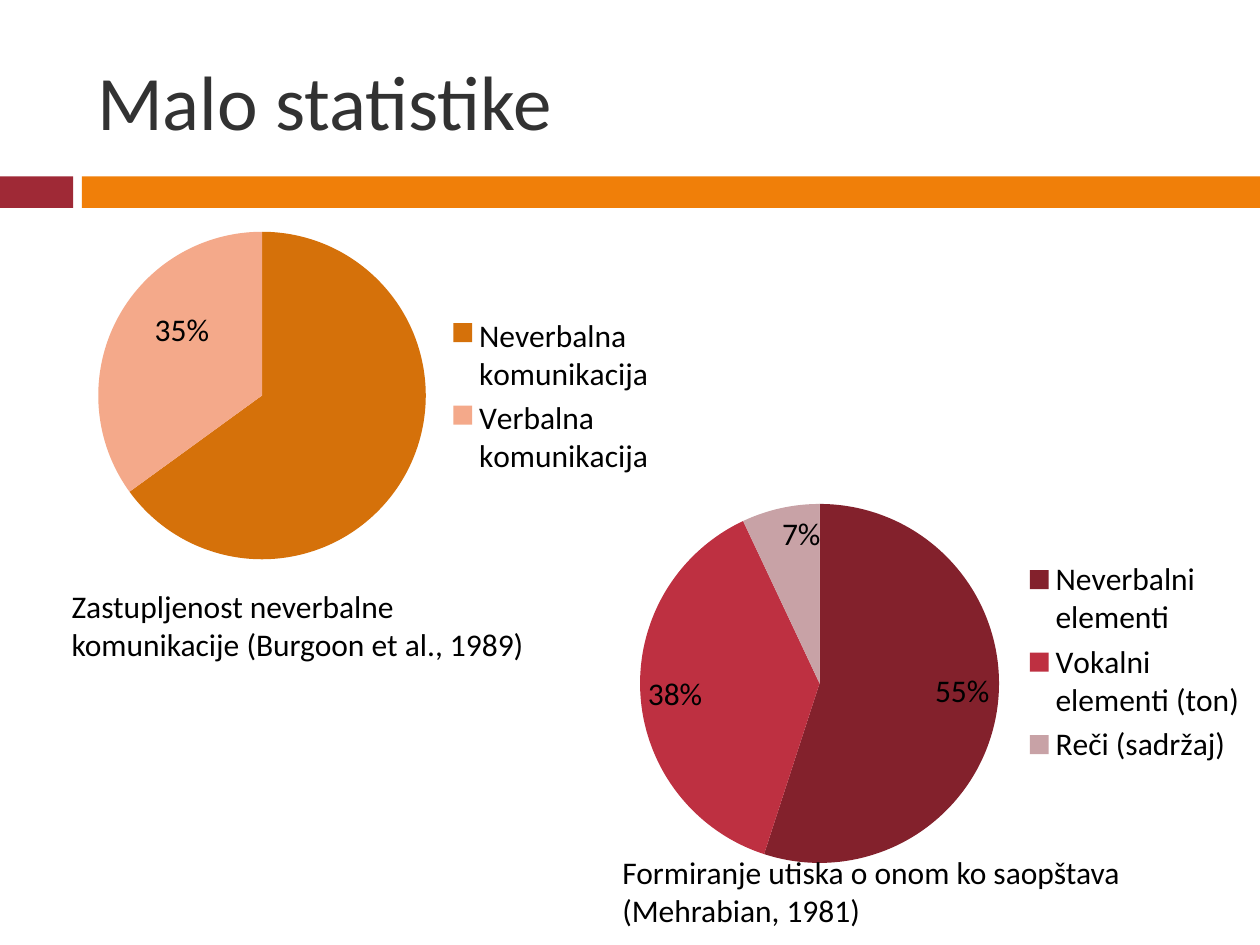
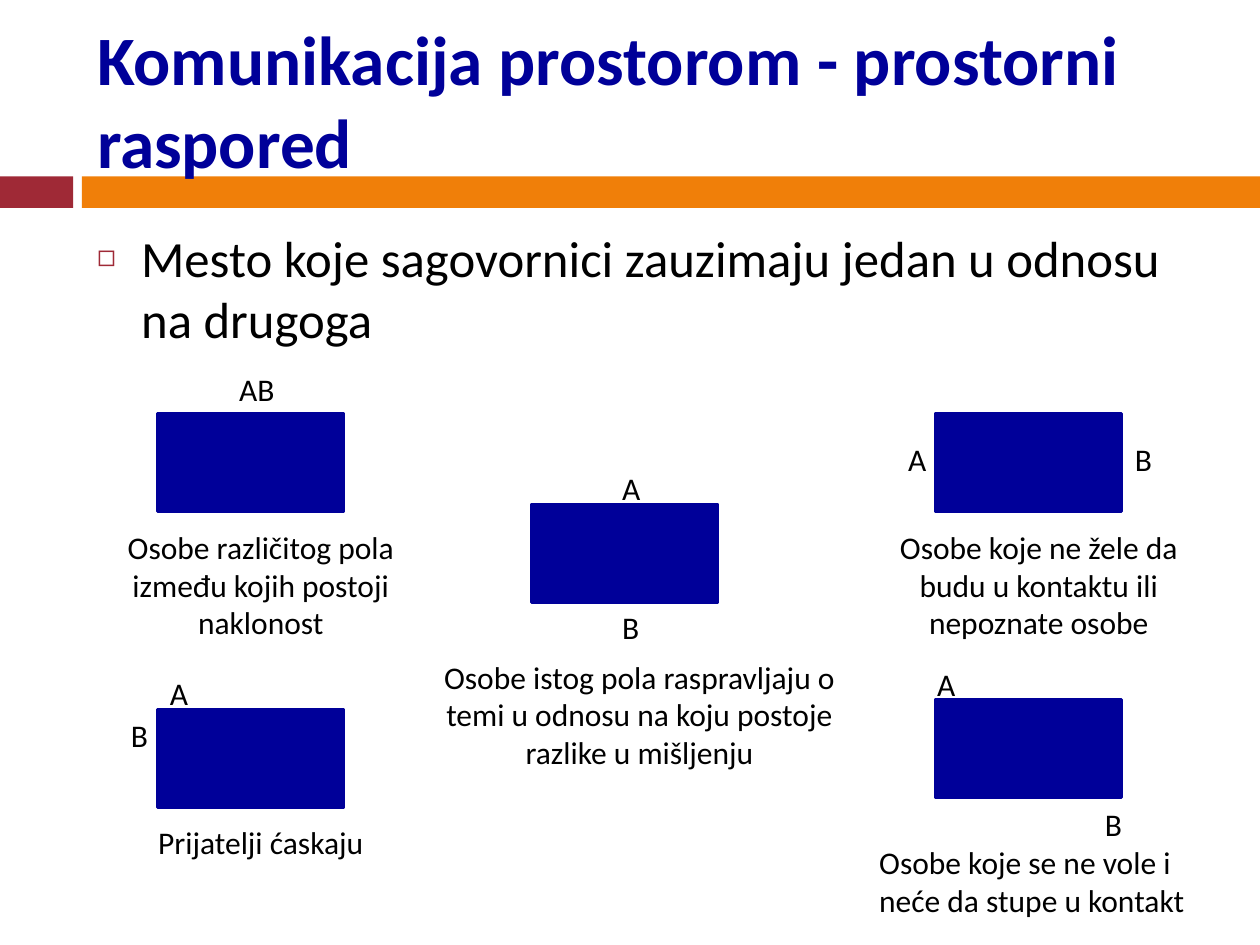
"""Build two slides on nonverbal communication: pie charts and seating plans."""
from lxml import etree
from pptx import Presentation
from pptx.chart.data import CategoryChartData
from pptx.dml.color import RGBColor
from pptx.enum.chart import XL_CHART_TYPE, XL_LABEL_POSITION, XL_LEGEND_POSITION
from pptx.enum.shapes import MSO_SHAPE
from pptx.enum.text import MSO_ANCHOR, MSO_AUTO_SIZE, PP_ALIGN
from pptx.oxml import parse_xml
from pptx.oxml.ns import nsdecls, qn
from pptx.util import Inches, Pt

PIE = XL_CHART_TYPE.PIE
INSIDE = XL_LABEL_POSITION.INSIDE_END
RIGHT = XL_LEGEND_POSITION.RIGHT
RECT = MSO_SHAPE.RECTANGLE
MIDDLE, TOP = MSO_ANCHOR.MIDDLE, MSO_ANCHOR.TOP
FIXED = MSO_AUTO_SIZE.NONE
LEFT, CENTER = PP_ALIGN.LEFT, PP_ALIGN.CENTER

FONT = "Calibri"
HUES = {
    "red": "9F2936", "orange": "F07F09", "title": "323232", "text": "000000",
    "navy": "000099", "amber": "D5710A", "peach": "F4A98A",
    "wine": "83212C", "rose": "BE3041", "mauve": "C8A2A6",
}
HUE = {name: RGBColor.from_string(code) for name, code in HUES.items()}


def write(shape, text, size=18, hue="text", align=LEFT, anchor=TOP, bold=False):
    frame = shape.text_frame
    frame.text = text
    frame.word_wrap = True
    frame.auto_size = FIXED
    frame.vertical_anchor = anchor
    para = frame.paragraphs[0]
    para.alignment = align
    font = para.runs[0].font
    font.name, font.size, font.bold = FONT, Pt(size), bold
    font.color.rgb = HUE[hue]
    return para


def block(slide, box, hue):
    shape = slide.shapes.add_shape(RECT, *map(Inches, box))
    shape.shadow.inherit = False
    shape.fill.solid()
    shape.fill.fore_color.rgb = HUE[hue]
    shape.line.fill.background()
    return shape


deck = Presentation()
deck.slide_width, deck.slide_height = Inches(10), Inches(7.5)

TITLES = [
    (5, "Malo statistike", 44, "title", False),
    (1, "Komunikacija prostorom - prostorni raspored", 39.6, "navy", True),
]
BANDS = [((0, 1.4, 0.58, 0.25), "red"), ((0.65, 1.4, 9.35, 0.25), "orange")]
for layout, text, size, hue, bold in TITLES:
    slide = deck.slides.add_slide(deck.slide_layouts[layout])
    for box, tint in BANDS:
        band = block(slide, box, tint)
        slide.shapes._spTree.insert(2, band._element)
    title = slide.shapes.title
    title.left, title.top, title.width, title.height = map(
        Inches, (0.67, 0.25, 8.92, 1.08))
    write(title, text, size, hue, LEFT, MIDDLE, bold)
stats, seats = deck.slides

WIDE, HIGH = 5.08, 3.47
PIES = [
    (0.23, 1.41, (0.78, 1.84, 2.6),
     [("Neverbalna komunikacija", 65, "amber"), ("Verbalna komunikacija", 35, "peach")]),
    (4.92, 3.52, (5.08, 4, 2.85),
     [("Neverbalni elementi", 55, "wine"), ("Vokalni elementi (ton)", 38, "rose"),
      ("Reči (sadržaj)", 7, "mauve")]),
]
charts = []
for left, top, (x, y, size), parts in PIES:
    data = CategoryChartData()
    data.categories = [name for name, value, hue in parts]
    data.add_series("Series 1", [value for name, value, hue in parts])
    chart = stats.shapes.add_chart(
        PIE, *map(Inches, (left, top, WIDE, HIGH)), data).chart
    charts.append(chart)
    chart.has_title = False
    chart.font.name, chart.font.size = FONT, Pt(18)
    chart.font.color.rgb = HUE["text"]
    chart.has_legend = True
    chart.legend.position = RIGHT
    chart.legend.include_in_layout = False
    plot = chart.plots[0]
    plot.vary_by_categories = True
    plot.has_data_labels = True
    labels = plot.data_labels
    labels.show_value = True
    labels.show_percentage = False
    labels.number_format = '0"%"'
    labels.number_format_is_linked = False
    labels.position = INSIDE
    for i, (name, value, hue) in enumerate(parts):
        fill = plot.series[0].points[i].format.fill
        fill.solid()
        fill.fore_color.rgb = HUE[hue]

    area = plot._element.getparent()
    for old in area.findall(qn("c:layout")):
        area.remove(old)
    frame = parse_xml(f"<c:layout {nsdecls('c')}><c:manualLayout/></c:layout>")
    area.insert(0, frame)
    rule = {"layoutTarget": "inner", "xMode": "edge", "yMode": "edge",
            "x": (x - left) / WIDE, "y": (y - top) / HIGH,
            "w": size / WIDE, "h": size / HIGH}
    for key, value in rule.items():
        etree.SubElement(frame[0], qn(f"c:{key}")).set("val", str(value))

label = charts[0].plots[0].series[0].points[1].data_label
label.text_frame.text = "35%"
font = label.text_frame.paragraphs[0].runs[0].font
font.name, font.size = FONT, Pt(18)
font.color.rgb = HUE["text"]
label.position = INSIDE
spot = parse_xml(
    f"<c:layout {nsdecls('c')}><c:manualLayout>"
    '<c:x val="0.05"/><c:y val="-0.03"/></c:manualLayout></c:layout>')
label._dLbl.insert(1, spot)

NOTES = [
    (0.47, 4.61, 3.83, "Zastupljenost neverbalne komunikacije (Burgoon et al., 1989)"),
    (4.84, 6.72, 4.22, "Formiranje utiska o onom ko saopštava (Mehrabian, 1981)"),
]
for x, y, width, text in NOTES:
    write(stats.shapes.add_textbox(*map(Inches, (x, y, width, 0.71))), text)

body = seats.placeholders[1]
body.left, body.top, body.width, body.height = map(Inches, (0.67, 1.75, 8.92, 4.92))
para = write(body, "Mesto koje sagovornici zauzimaju jedan u odnosu na drugoga", 29)
para.space_before = Pt(7)
props = para._p.get_or_add_pPr()
props.set("marL", str(Inches(0.35)))
props.set("indent", str(-Inches(0.35)))
for item in (f'<a:buClr {nsdecls("a")}><a:srgbClr val="{HUES["red"]}"/></a:buClr>',
             f'<a:buSzPct {nsdecls("a")} val="60000"/>',
             f'<a:buChar {nsdecls("a")} char="◻"/>'):
    props.append(parse_xml(item))

DESKS = [
    (1.25, 3.28, [("AB", 1.8, 2.89, 0.63)],
     ("Osobe različitog pola između kojih postoji naklonost", 0.86, 4.14, 2.42, CENTER)),
    (7.42, 3.28, [("A", 7.11, 3.44, 0.23), ("B", 8.91, 3.44, 0.23)],
     ("Osobe koje ne žele da budu u kontaktu ili nepoznate osobe",
      6.88, 4.14, 2.73, CENTER)),
    (4.22, 4, [("A", 4.84, 3.67, 0.63), ("B", 4.84, 4.78, 0.63)],
     ("Osobe istog pola raspravljaju o temi u odnosu na koju postoje razlike u mišljenju",
      3.28, 5.17, 3.59, CENTER)),
    (1.25, 5.63, [("A", 1.25, 5.3, 0.63), ("B", 0.94, 5.63, 0.39)],
     ("Prijatelji ćaskaju", 0.86, 6.48, 2.42, CENTER)),
    (7.42, 5.55, [("A", 7.34, 5.23, 0.63), ("B", 8.67, 6.34, 0.63)],
     ("Osobe koje se ne vole i neće da stupe u kontakt", 6.88, 6.64, 2.73, LEFT)),
]
for x, y, people, (text, left, top, width, align) in DESKS:
    desk = block(seats, (x, y, 1.48, 0.78), "navy")
    desk.line.color.rgb = HUE["navy"]
    desk.line.width = Pt(1.5)
    for who, px, py, wide in people:
        write(seats.shapes.add_textbox(*map(Inches, (px, py, wide, 0.4))), who)
    note = seats.shapes.add_textbox(*map(Inches, (left, top, width, 0.71)))
    write(note, text, align=align)

deck.save("out.pptx")
